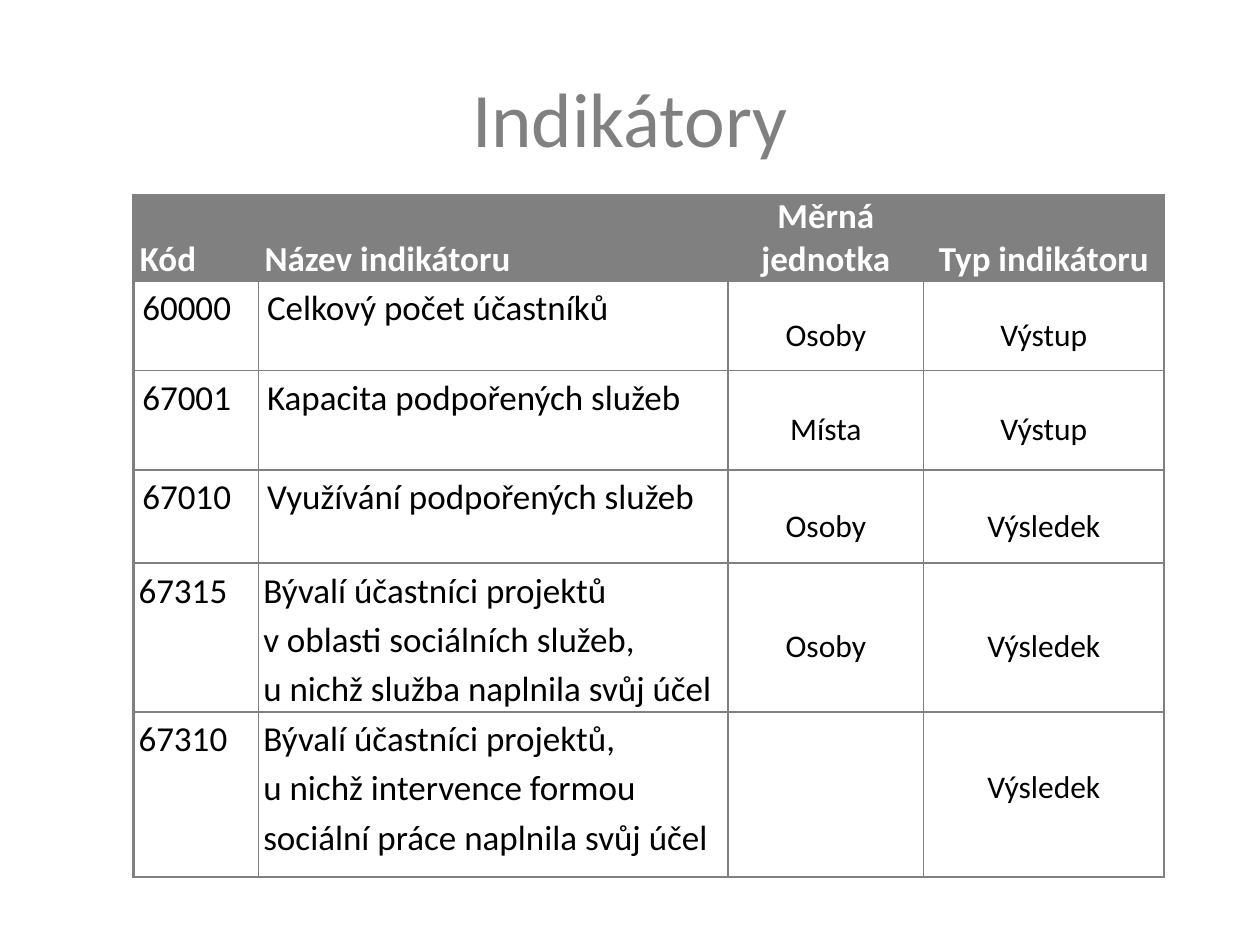
from dataclasses import dataclass

from lxml.etree import SubElement
from pptx import Presentation
from pptx.dml.color import RGBColor as RGB
from pptx.enum.text import MSO_ANCHOR as ANCHOR, PP_ALIGN as ALIGN
from pptx.oxml.ns import qn
from pptx.util import Inches, Pt

COLORS = {"gray": "808080", "white": "FFFFFF", "black": "000000"}
GRID_COLS, GRID_ROWS = 100, 75
THIN, THICK = 1, 1.5


@dataclass
class CellStyle:
    size: int = 20
    color: str = "black"
    bold: bool = False
    fill: str = ""
    align: ALIGN = ALIGN.LEFT
    anchor: ANCHOR = ANCHOR.TOP
    spacing: float = 1.15
    before: int = 0
    after: int = 0
    inset: float = 0.05
    bottom: float = 0


class Deck:
    font = "Calibri"

    def __init__(self, prs):
        self.prs = prs
        self.s = prs.slides.add_slide(prs.slide_layouts[5])

    def x(self, cols):
        return int(self.prs.slide_width * cols / GRID_COLS)

    def y(self, rows):
        return int(self.prs.slide_height * rows / GRID_ROWS)

    def label(self, tf, text, size, color, align, bold=False):
        p = tf.paragraphs[0]
        p.text = text
        p.alignment = align
        for r in p.runs:
            r.font.name, r.font.size, r.font.bold = self.font, Pt(size), bold
            r.font.color.rgb = RGB.from_string(COLORS[color])
        return p

    def title(self, text, left, top, width, height):
        sp = self.s.shapes.title
        sp.left, sp.top = self.x(left), self.y(top)
        sp.width, sp.height = self.x(width), self.y(height)
        sp.text_frame.vertical_anchor = ANCHOR.MIDDLE
        self.label(sp.text_frame, text, 44, "gray", ALIGN.CENTER)

    def table(self, left, top, widths, heights):
        frame = self.s.shapes.add_table(
            len(heights), len(widths), self.x(left), self.y(top),
            self.x(sum(widths)), self.y(sum(heights)))
        table = frame.table
        table.first_row = table.horz_banding = False
        for col, width in zip(table.columns, widths):
            col.width = self.x(width)
        for row, height in zip(table.rows, heights):
            row.height = self.y(height)
        return table

    def cell(self, cell, text, style):
        cell.vertical_anchor = style.anchor
        cell.margin_left = cell.margin_right = Inches(style.inset)
        cell.margin_top, cell.margin_bottom = 0, Inches(style.bottom)
        if style.fill:
            cell.fill.solid()
            cell.fill.fore_color.rgb = RGB.from_string(COLORS[style.fill])
        else:
            cell.fill.background()
        p = self.label(cell.text_frame, text, style.size, style.color,
                       style.align, style.bold)
        p.line_spacing = style.spacing
        p.space_before, p.space_after = Pt(style.before), Pt(style.after)

    def borders(self, cell, widths, color="gray"):
        """Set the left, right, top and bottom lines, in that order."""
        tc_pr = cell._tc.get_or_add_tcPr()
        for i, (side, width) in enumerate(zip("LRTB", widths)):
            ln = SubElement(tc_pr, qn(f"a:ln{side}"), w=str(Pt(width)))
            fill = SubElement(ln, qn("a:solidFill"))
            SubElement(fill, qn("a:srgbClr"), val=COLORS[color])
            tc_pr.insert(i, ln)


# Cell styles
HEAD = dict(color="white", bold=True, fill="gray", anchor=ANCHOR.BOTTOM, before=12)
HEAD_LEFT = CellStyle(**HEAD, align=ALIGN.JUSTIFY, spacing=1.5)
HEAD_MID = CellStyle(**HEAD, align=ALIGN.CENTER, spacing=1.0)
SHORT = CellStyle(inset=0.07, after=6)
LONG = CellStyle(inset=0.04, before=3, after=3)
CENTRED = dict(size=18, align=ALIGN.CENTER, anchor=ANCHOR.MIDDLE)
VALUE = CellStyle(**CENTRED, spacing=1.5, before=12)
RAISED = CellStyle(**CENTRED, spacing=1.0, bottom=0.1)

# Each row: height, style of the left pair, style of the right pair, texts
ROWS = [
    (6.8, HEAD_LEFT, HEAD_MID,
     ["Kód", "Název indikátoru", "Měrná jednotka", "Typ indikátoru"]),
    (7.1, SHORT, VALUE, ["60000", "Celkový počet účastníků", "Osoby", "Výstup"]),
    (7.9, SHORT, VALUE, ["67001", "Kapacita podpořených služeb", "Místa", "Výstup"]),
    (7.4, SHORT, VALUE, ["67010", "Využívání podpořených služeb", "Osoby", "Výsledek"]),
    (11.8, LONG, VALUE,
     ["67315", "Bývalí účastníci projektů\nv oblasti sociálních služeb,\n"
      "u nichž služba naplnila svůj účel", "Osoby", "Výsledek"]),
    (13.1, LONG, RAISED,
     ["67310", "Bývalí účastníci projektů,\nu nichž intervence formou "
      "sociální práce naplnila svůj účel", "", "Výsledek"]),
]
COL_WIDTHS = [9.9, 37.3, 15.5, 19.1]


def main():
    prs = Presentation()
    prs.slide_width, prs.slide_height = Inches(10), Inches(7.5)
    deck = Deck(prs)

    # Title
    deck.title("Indikátory", 5, 3, 90, 12.5)

    # Indicator table: thick outer frame and a thick line above the last row
    table = deck.table(10.6, 15.5, COL_WIDTHS, [row[0] for row in ROWS])
    last_row, last_col = len(ROWS) - 1, len(COL_WIDTHS) - 1
    for i, (_, left, right, texts) in enumerate(ROWS):
        for j, text in enumerate(texts):
            cell = table.cell(i, j)
            deck.cell(cell, text, left if j < 2 else right)
            thick = (j == 0, j == last_col, i in (0, last_row), i >= last_row - 1)
            deck.borders(cell, [THICK if t else THIN for t in thick])

    prs.save("out.pptx")


if __name__ == "__main__":
    main()
